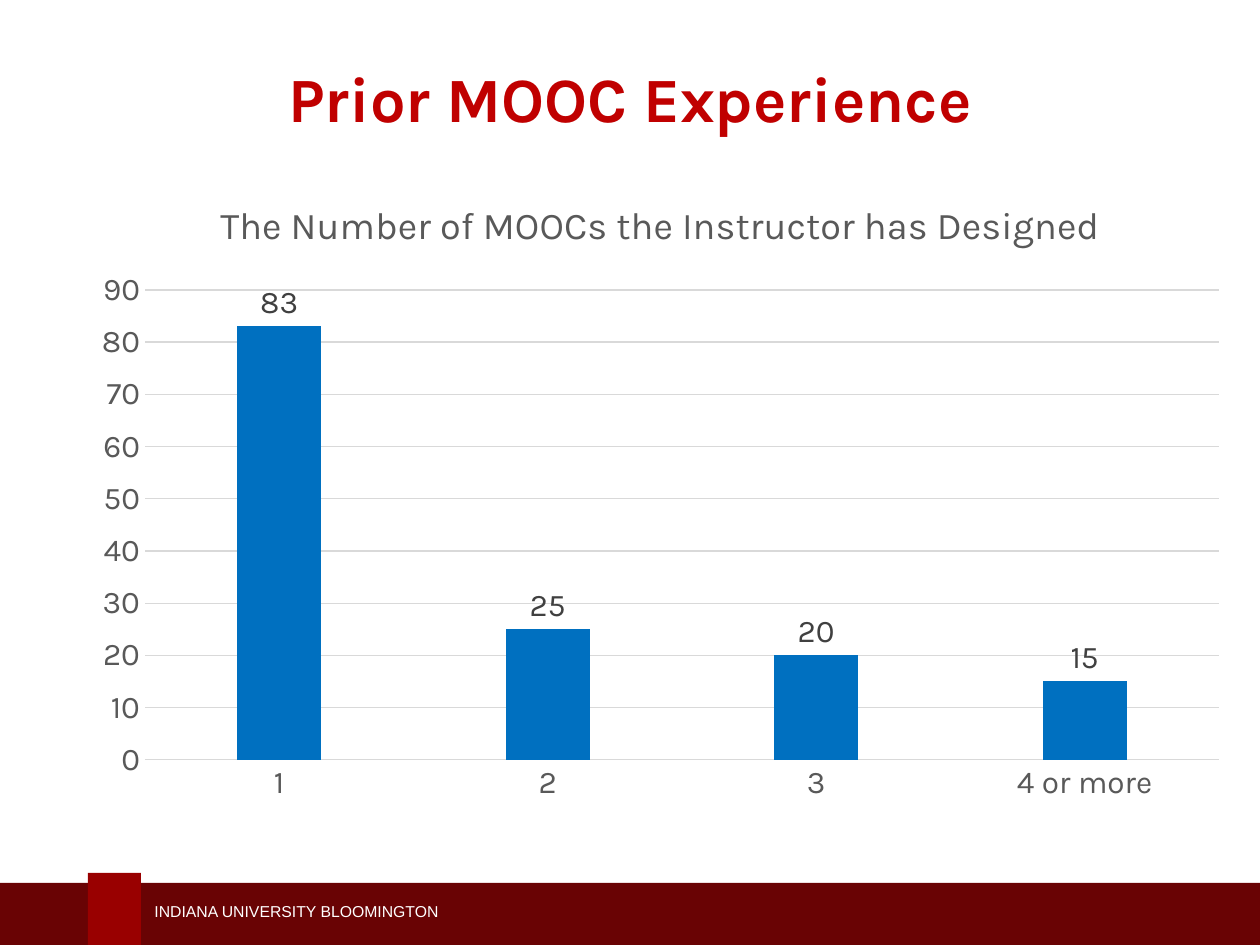
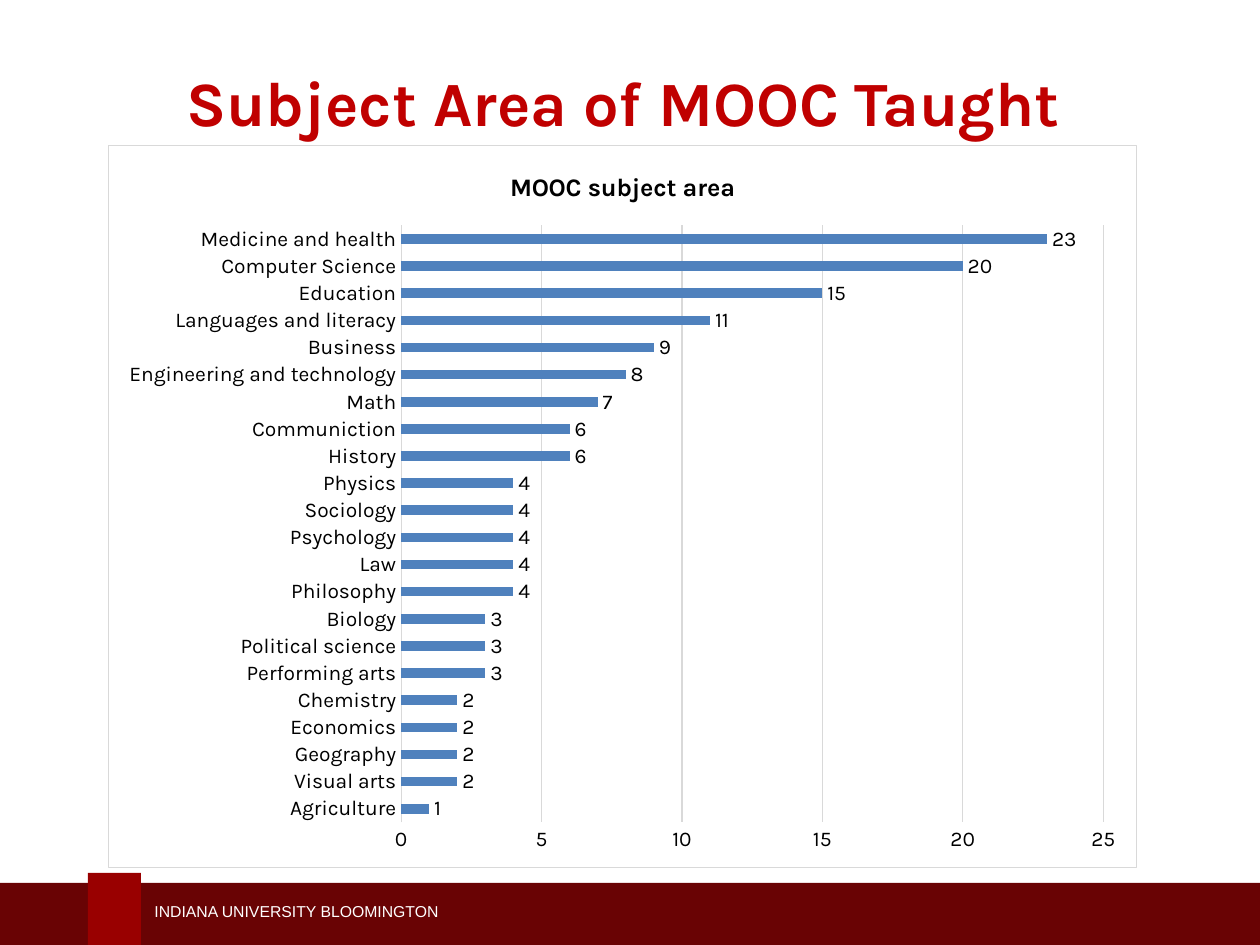
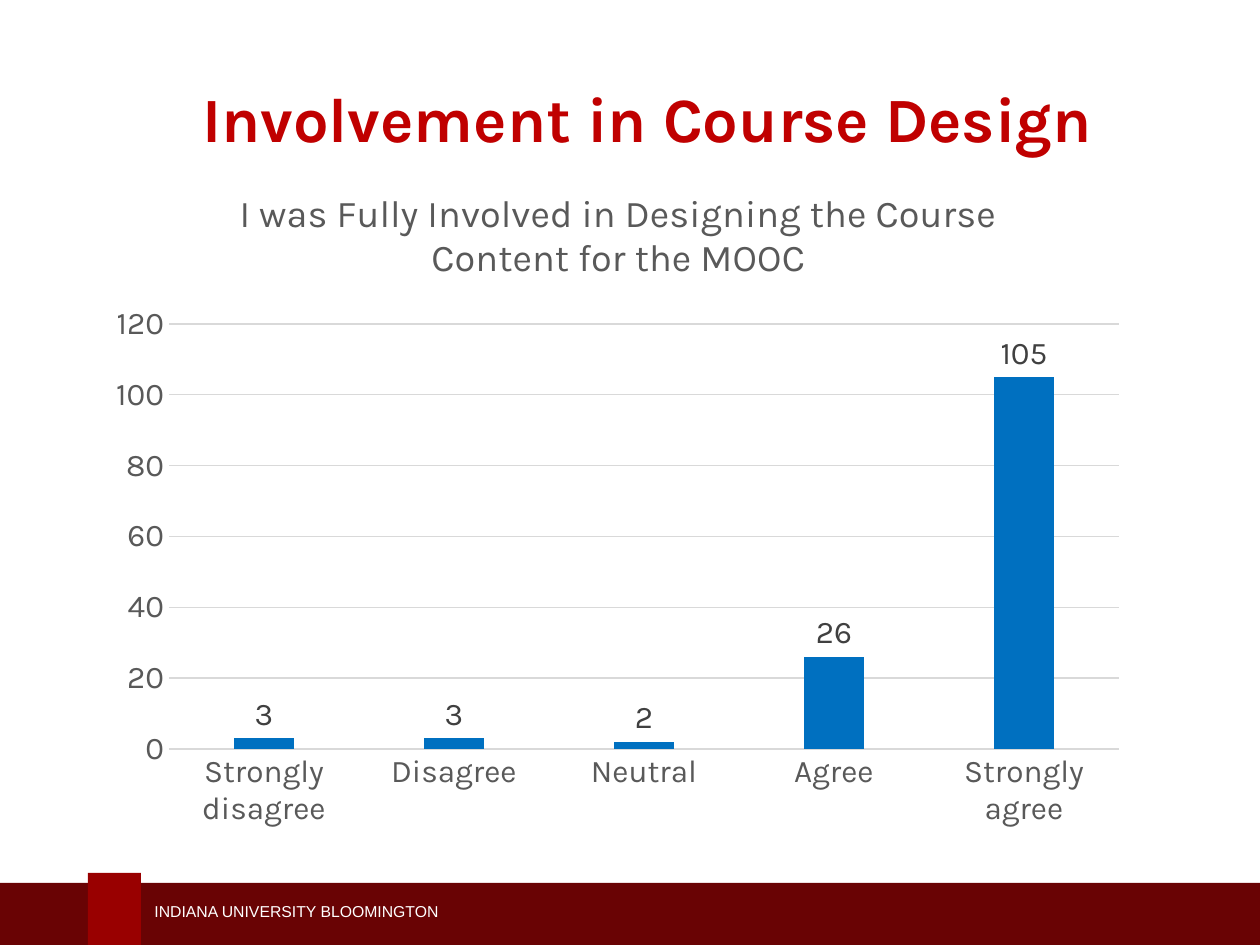
from dataclasses import dataclass

from lxml import etree
from pptx import Presentation
from pptx import util as u
from pptx.chart.data import CategoryChartData
from pptx.dml.color import RGBColor
from pptx.enum import chart as charts, shapes, text
from pptx.oxml import parse_xml
from pptx.oxml.ns import nsdecls, qn


@dataclass(frozen=True)
class Theme:
    band: str = "690304"
    tab: str = "990000"
    heading: str = "C00000"
    white: str = "FFFFFF"
    black: str = "000000"
    gray: str = "595959"
    dark_gray: str = "404040"
    grid: str = "D9D9D9"
    bar_blue: str = "0070C0"
    soft_blue: str = "4F81BD"
    font: str = "Karla"
    footer_font: str = "Arial"
    heading_size: float = 36
    footer_size: float = 9
    chart_size: float = 18
    dense_size: float = 12
    title_ratio: float = 1.2


THEME = Theme()
PX_PER_INCH = 126
SLIDE_SIZE = (1260, 945)
TITLE_SIZE = (1102, 88)
FOOTER_BOX = (-4, 873, 1271, 73)

SUBJECTS = {
    "Agriculture": 1, "Visual arts": 2, "Geography": 2, "Economics": 2,
    "Chemistry": 2, "Performing arts": 3, "Political science": 3,
    "Biology": 3, "Philosophy": 4, "Law": 4, "Psychology": 4,
    "Sociology": 4, "Physics": 4, "History": 6, "Communiction": 6,
    "Math": 7, "Engineering and technology": 8, "Business": 9,
    "Languages and literacy": 11, "Education": 15,
    "Computer Science": 20, "Medicine and health": 23,
}


def px(length):
    return u.Emu(round(length * u.Inches(1) / PX_PER_INCH))


def emu_box(box):
    return [px(length) for length in box]


def style_font(font, size, color, name=THEME.font, bold=False):
    font.size = u.Pt(size)
    font.name = name
    font.bold = bold
    font.color.rgb = RGBColor.from_string(color)


def add_rectangle(slide, box, color):
    shape = slide.shapes.add_shape(shapes.MSO_SHAPE.RECTANGLE, *emu_box(box))
    shape.shadow.inherit = False
    shape.fill.solid()
    shape.fill.fore_color.rgb = RGBColor.from_string(color)
    shape.line.fill.background()


def add_text(slide, box, words, align, **font_style):
    frame = slide.shapes.add_textbox(*emu_box(box)).text_frame
    frame.word_wrap = True
    frame.vertical_anchor = text.MSO_ANCHOR.MIDDLE
    paragraph = frame.paragraphs[0]
    paragraph.text = words
    paragraph.alignment = align
    style_font(paragraph.font, **font_style)


def add_footer(slide, box):
    left, top, width, height = box
    add_rectangle(slide, (left, top + 10, width, height - 10), THEME.band)
    add_rectangle(slide, (left + 92, top, 53, height), THEME.tab)
    add_text(slide, (left + 146, top + 23, 498, 31),
             "INDIANA UNIVERSITY BLOOMINGTON", text.PP_ALIGN.LEFT,
             size=THEME.footer_size, color=THEME.white, name=THEME.footer_font)


def place_plot(chart, box, margins):
    """Fix the inner plot area by its left, top, right and bottom margins."""
    width, height = box[2:]
    left, top, right, bottom = margins
    values = {
        "x": left / width, "y": top / height,
        "w": (width - left - right) / width,
        "h": (height - top - bottom) / height,
    }
    plot_area = chart.element.find(qn("c:chart")).find(qn("c:plotArea"))
    for old_layout in plot_area.findall(qn("c:layout")):
        plot_area.remove(old_layout)
    layout = etree.Element(qn("c:layout"))
    manual = etree.SubElement(layout, qn("c:manualLayout"))
    settings = [("layoutTarget", "inner"), ("xMode", "edge"), ("yMode", "edge")]
    settings += [(key, f"{value:.4f}") for key, value in values.items()]
    for tag, value in settings:
        etree.SubElement(manual, qn(f"c:{tag}")).set("val", value)
    plot_area.insert(0, layout)


def frame_chart(chart):
    chart.element.find(qn("c:chart")).addnext(parse_xml(
        f'<c:spPr {nsdecls("c", "a")}>'
        f'<a:solidFill><a:srgbClr val="{THEME.white}"/></a:solidFill>'
        f'<a:ln w="9525"><a:solidFill><a:srgbClr val="{THEME.grid}"/>'
        '</a:solidFill></a:ln></c:spPr>'))


def style_axes(chart, size, color, maximum, step):
    for axis in (chart.category_axis, chart.value_axis):
        axis.major_tick_mark = axis.minor_tick_mark = charts.XL_TICK_MARK.NONE
        style_font(axis.tick_labels.font, size, color)
    value_axis = chart.value_axis
    value_axis.minimum_scale = 0
    value_axis.maximum_scale = maximum
    value_axis.major_unit = step
    value_axis.format.line.fill.background()
    for line in (chart.category_axis.format.line,
                 value_axis.major_gridlines.format.line):
        line.width = u.Pt(0.75)
        line.color.rgb = RGBColor.from_string(THEME.grid)


def add_bars(slide, box, kind, title, counts, margins, scale, size,
             text_color, label_color, bar_color, gap, bold_title=False):
    data = CategoryChartData(number_format="0")
    data.categories = list(counts)
    data.add_series("Series 1", list(counts.values()))
    chart = slide.shapes.add_chart(kind, *emu_box(box), data).chart
    style_font(chart.font, size, THEME.black)
    chart.has_legend = False

    # Chart title
    chart.has_title = True
    paragraph = chart.chart_title.text_frame.paragraphs[0]
    paragraph.text = title
    style_font(paragraph.font, size * THEME.title_ratio, text_color,
               bold=bold_title)

    # Axes and plot area
    style_axes(chart, size, text_color, *scale)
    place_plot(chart, box, margins)

    # Bars and their values
    plot = chart.plots[0]
    plot.vary_by_categories = False
    plot.gap_width = gap
    fill = plot.series[0].format.fill
    fill.solid()
    fill.fore_color.rgb = RGBColor.from_string(bar_color)
    plot.has_data_labels = True
    labels = plot.data_labels
    labels.show_value = True
    labels.position = charts.XL_LABEL_POSITION.OUTSIDE_END
    style_font(labels.font, size, label_color)
    return chart


def add_column_chart(slide, box, title, counts, margins, scale):
    chart = add_bars(slide, box, charts.XL_CHART_TYPE.COLUMN_CLUSTERED, title,
                     counts, margins, scale, THEME.chart_size, THEME.gray,
                     THEME.dark_gray, THEME.bar_blue, gap=219)
    chart.plots[0].overlap = -27


def add_framed_bar_chart(slide, box, title, counts, margins, scale):
    chart = add_bars(slide, box, charts.XL_CHART_TYPE.BAR_CLUSTERED, title,
                     counts, margins, scale, THEME.dense_size, THEME.black,
                     THEME.black, THEME.soft_blue, gap=182, bold_title=True)
    frame_chart(chart)


def add_titled_slide(presentation, heading, left, top):
    slide = presentation.slides.add_slide(presentation.slide_layouts[6])
    add_footer(slide, FOOTER_BOX)
    add_text(slide, (left, top, *TITLE_SIZE), heading, text.PP_ALIGN.CENTER,
             size=THEME.heading_size, color=THEME.heading, bold=True)
    return slide


def main():
    presentation = Presentation()
    presentation.slide_width, presentation.slide_height = emu_box(SLIDE_SIZE)

    # Prior experience
    slide = add_titled_slide(presentation, "Prior MOOC Experience", 79, 53)
    add_column_chart(
        slide, (79, 173, 1163, 643),
        "The Number of MOOCs the Instructor has Designed",
        {"1": 83, "2": 25, "3": 20, "4 or more": 15},
        margins=(66, 117, 23, 56), scale=(90, 10))

    # Subject areas
    slide = add_titled_slide(presentation, "Subject Area of MOOC Taught", 72, 57)
    add_framed_bar_chart(
        slide, (108, 145, 1029, 723), "MOOC subject area", SUBJECTS,
        margins=(293, 80, 33, 45), scale=(25, 5))

    # Involvement in design
    slide = add_titled_slide(presentation, "Involvement in Course Design", 96, 73)
    add_column_chart(
        slide, (96, 160, 1045, 680),
        "I was Fully Involved in Designing the Course Content for the MOOC",
        {"Strongly disagree": 3, "Disagree": 3, "Neutral": 2, "Agree": 26,
         "Strongly agree": 105},
        margins=(73, 164, 22, 91), scale=(120, 20))

    presentation.save("out.pptx")


if __name__ == "__main__":
    main()
